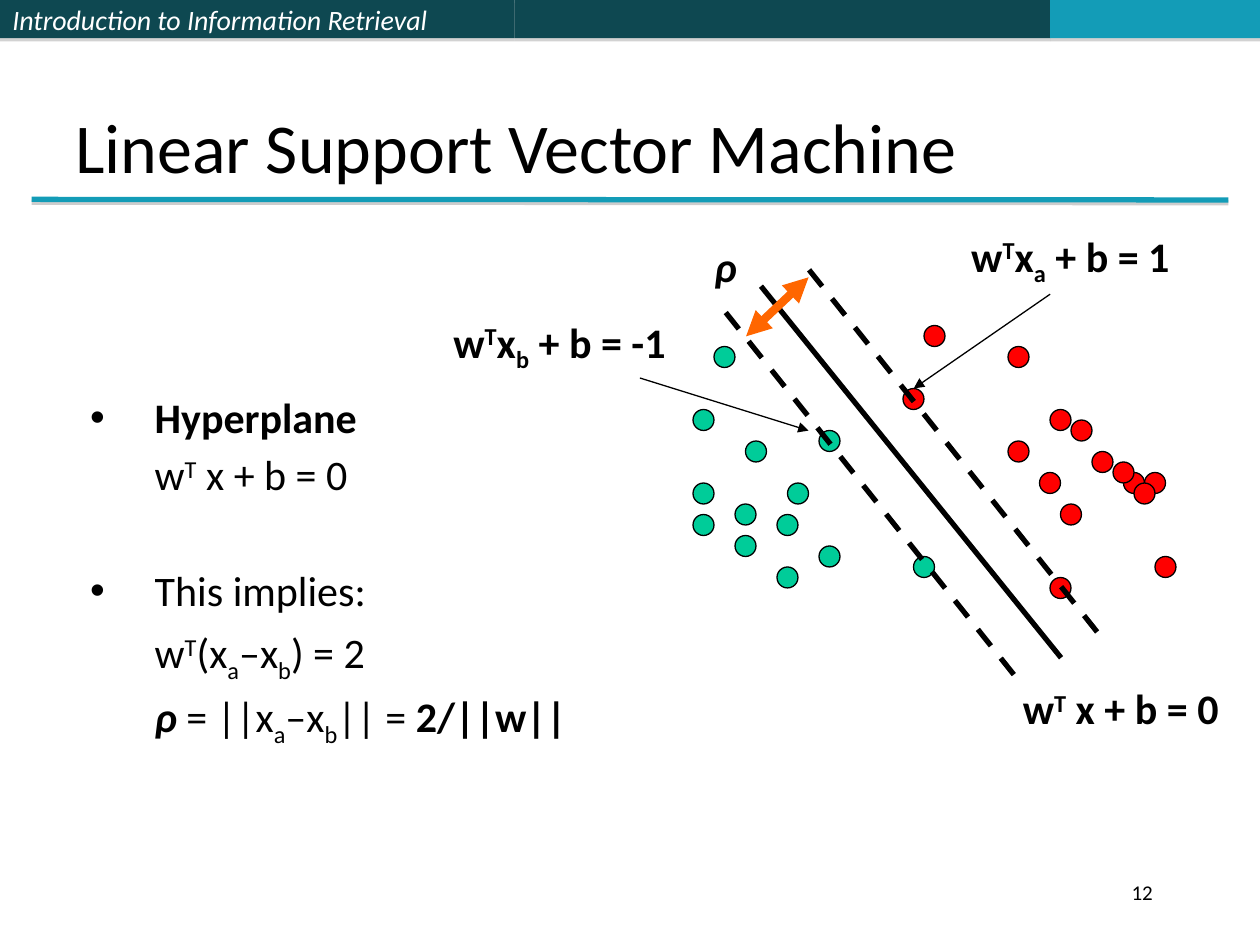
from lxml import etree
from pptx import Presentation
from pptx import util as u
from pptx.dml.color import RGBColor
from pptx.enum import dml, shapes, text
from pptx.oxml import ns

COLOURS = {
    "ink": "000000", "paper": "FFFFFF", "dark": "0E4851", "teal": "139CB7",
    "green": "00CC99", "red": "FF0000", "orange": "FF6600", "shade": "808080",
}
RUN_FORMATS = {
    "plain": {}, "bold": {"bold": True}, "italic": {"italic": True},
    "both": {"bold": True, "italic": True},
}
BASELINES = {"^": "30000", "_": "-25000"}
CELL = 2.54 / 12
INDENT = 1.3
GREEN_CELLS = [
    (68, 33), (66, 46), (71, 42), (66, 49), (70, 51), (74, 49), (78, 52),
    (70, 48), (66, 39), (78, 41), (87, 53), (75, 46), (74, 54),
]
RED_CELLS = [
    (88, 31), (96, 33), (100, 39), (86, 37), (104, 43), (107, 45), (101, 48), (109, 45),
    (110, 53), (100, 55), (96, 42), (102, 40), (99, 45), (106, 44), (108, 46),
]


def rgb(name):
    return RGBColor.from_string(COLOURS[name])


def add_xml(parent, tag, **attributes):
    return etree.SubElement(parent, ns.qn(tag), attributes)


class SlideBuilder:
    """Draws styled elements on one slide, with lengths in centimetres."""

    def __init__(self, slide, font="Calibri"):
        self.slide = slide
        self.font = font

    def shade(self, effects, alpha, distance):
        shadow = add_xml(effects, "a:outerShdw", blurRad="0", dist=str(u.Pt(distance)),
                         dir="5400000", algn="ctr", rotWithShape="0")
        colour = add_xml(shadow, "a:srgbClr", val=COLOURS["shade"])
        add_xml(colour, "a:alpha", val=str(alpha * 1000))

    def add_runs(self, paragraph, runs, size, colour="ink"):
        for words, style, *baseline in runs:
            run = paragraph.add_run()
            run.text = words
            values = {"name": self.font, "size": u.Pt(size), **RUN_FORMATS[style]}
            for key, value in values.items():
                setattr(run.font, key, value)
            run.font.color.rgb = rgb(colour)
            for mark in baseline:
                run.font._element.set("baseline", BASELINES[mark])

    def band(self, left, width, colour):
        band = self.slide.shapes.add_shape(
            shapes.MSO_SHAPE.RECTANGLE, u.Cm(left), 0, u.Cm(width), u.Cm(0.77))
        band.fill.solid()
        band.fill.fore_color.rgb = rgb(colour)
        band.line.fill.background()
        band.shadow.inherit = False
        self.shade(band._element.spPr.find(ns.qn("a:effectLst")), 35, 1.8)
        return band

    def dot(self, column, row, colour):
        dot = self.slide.shapes.add_shape(
            shapes.MSO_SHAPE.OVAL, *(u.Cm(n * CELL) for n in (column, row, 2, 2)))
        dot.fill.solid()
        dot.fill.fore_color.rgb = rgb(colour)
        dot.line.color.rgb = rgb("ink")
        dot.line.width = u.Pt(0.75)
        dot.shadow.inherit = False

    def line(self, start, end, width, colour="ink", dashed=False, ends=(), shaded=False):
        line = self.slide.shapes.add_connector(
            shapes.MSO_CONNECTOR.STRAIGHT, *(u.Cm(n) for n in (*start, *end)))
        line.line.color.rgb = rgb(colour)
        line.line.width = u.Pt(width)
        if dashed:
            line.line.dash_style = dml.MSO_LINE.DASH
        for tag in ends:
            add_xml(line.line._get_or_add_ln(), tag, type="triangle")
        effects = add_xml(line._element.spPr, "a:effectLst")
        if shaded:
            self.shade(effects, 38, 1.6)

    def box(self, left, top, width, height, wrap=True, anchor="TOP"):
        box = self.slide.shapes.add_textbox(*(u.Cm(n) for n in (left, top, width, height)))
        values = {"word_wrap": wrap, "vertical_anchor": text.MSO_ANCHOR[anchor]}
        for key, value in values.items():
            setattr(box.text_frame, key, value)
        return box.text_frame

    def label(self, left, top, width, runs):
        frame = self.box(left, top, width, 1.27, wrap=False)
        frame.auto_size = text.MSO_AUTO_SIZE.SHAPE_TO_FIT_TEXT
        self.add_runs(frame.paragraphs[0], runs, 24)

    def outline(self, frame, items):
        for index, (bulleted, before, runs) in enumerate(items):
            paragraph = frame.add_paragraph() if index else frame.paragraphs[0]
            paragraph.line_spacing = 0.9
            paragraph.space_before = u.Pt(before)
            properties = paragraph._p.get_or_add_pPr()
            properties.set("marL", str(u.Cm(INDENT)))
            properties.set("indent", str(-u.Cm(INDENT) if bulleted else 0))
            if bulleted:
                add_xml(add_xml(properties, "a:buClr"), "a:srgbClr", val=COLOURS["ink"])
                add_xml(properties, "a:buFont", typeface="Arial")
                add_xml(properties, "a:buChar", char="•")
            self.add_runs(paragraph, runs, 24)


def weights(style):
    return [("w", style), ("T", style, "^")]


def margin_label(point, value):
    return [*weights("bold"), ("x", "bold"), (point, "bold", "_"), (f" + b = {value}", "bold")]


def main():
    deck = Presentation()
    deck.slide_width, deck.slide_height = u.Cm(25.4), u.Cm(19.05)
    builder = SlideBuilder(deck.slides.add_slide(deck.slide_layouts[6]))

    course = builder.band(0, 10.37, "dark").text_frame
    course.vertical_anchor = text.MSO_ANCHOR.MIDDLE
    course.paragraphs[0].alignment = text.PP_ALIGN.LEFT
    builder.add_runs(course.paragraphs[0],
                     [("Introduction to Information Retrieval", "italic")], 16, "paper")
    builder.band(10.37, 10.8, "dark")
    builder.band(21.17, 4.23, "teal")
    builder.line((0.64, 4.02), (24.76, 4.03), 3, "teal", shaded=True)

    number = builder.box(18.2, 17.36, 5.29, 1.27, anchor="MIDDLE").paragraphs[0]
    number.alignment = text.PP_ALIGN.RIGHT
    builder.add_runs(number, [("12", "plain")], 12)
    title = builder.box(1.27, 0.28, 22.83, 3.63, anchor="BOTTOM").paragraphs[0]
    builder.add_runs(title, [("Linear Support Vector Machine", "plain")], 40)

    difference = [("x", "plain"), ("a", "plain", "_"), ("–x", "plain"), ("b", "plain", "_")]
    builder.outline(builder.box(1.57, 7.88, 19.58, 9.7), [
        (True, 0, [("Hyperplane", "bold")]),
        (False, 7, [*weights("plain"), (" x + b = 0", "plain")]),
        (True, 40, [("This implies:", "plain")]),
        (False, 7, [*weights("plain"), ("(", "plain"), *difference, (") = 2", "plain")]),
        (False, 7, [("ρ", "both"), (" = ||", "plain"), *difference,
                    ("|| = ", "plain"), ("2/||w||", "bold")]),
    ])

    for colour, cells in (("green", GREEN_CELLS), ("red", RED_CELLS)):
        for column, row in cells:
            builder.dot(column, row, colour)

    builder.line((15.34, 5.77), (21.39, 13.26), 3)
    for left, top in ((14.63, 6.3), (16.31, 5.44)):
        builder.line((left, top), (left + 5.84, top + 7.34), 3, dashed=True)

    builder.label(20.37, 13.64, 4.52, [*weights("bold"), (" x + b = 0", "bold")])
    builder.label(19.33, 4.52, 4.57, margin_label("a", "1"))
    builder.label(8.89, 6.25, 4.88, margin_label("b", "-1"))
    builder.label(14.15, 4.72, 0.97, [("ρ", "both")])
    for start, end in (((21.17, 5.93), (18.42, 7.83)), ((12.9, 7.62), (16.3, 8.68))):
        builder.line(start, end, 0.75, ends=["a:tailEnd"])
    builder.line((15.04, 6.78), (16.3, 5.59), 4.75, "orange", ends=["a:headEnd", "a:tailEnd"])

    deck.save("out.pptx")


if __name__ == "__main__":
    main()
